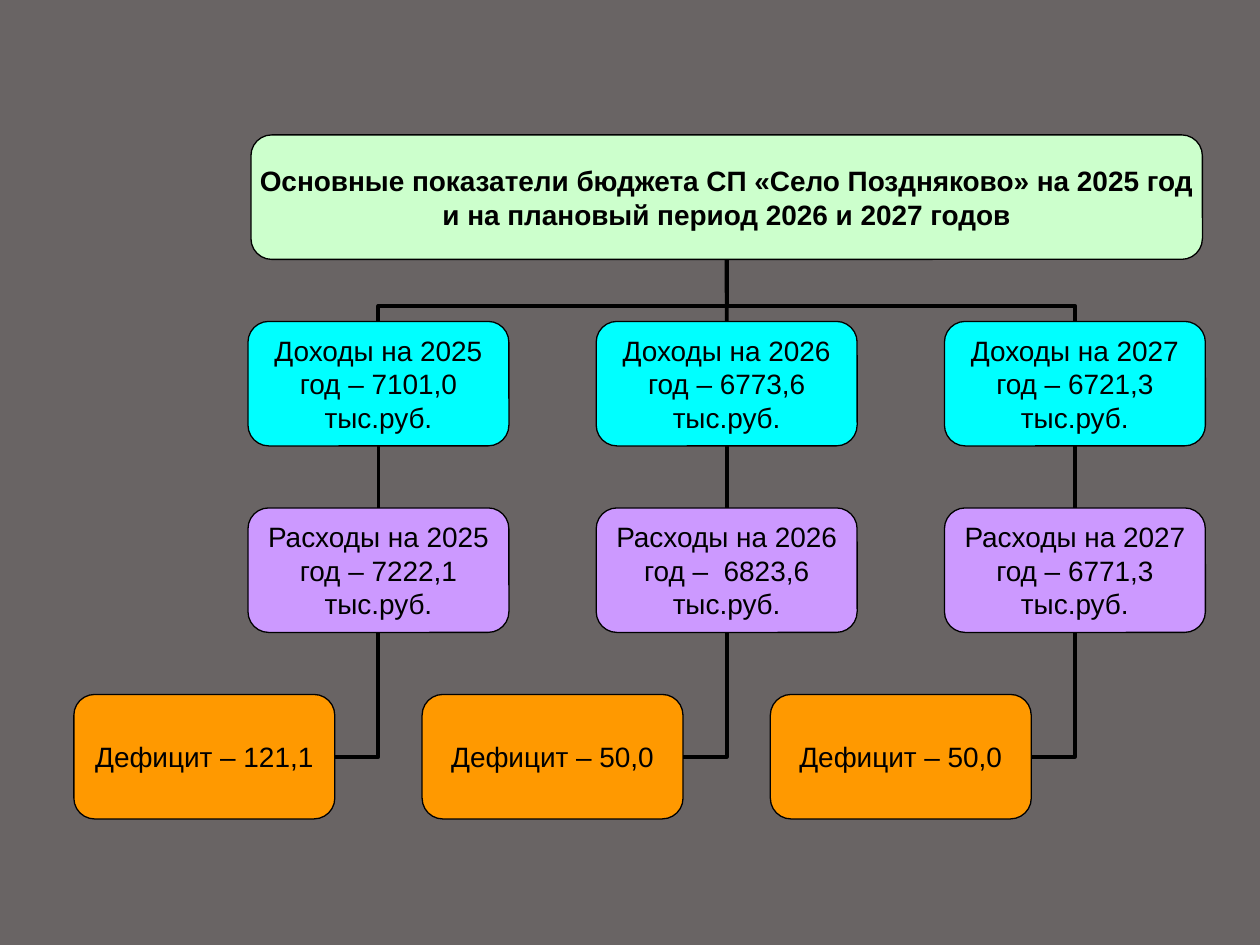
from typing import NamedTuple

from pptx import Presentation
from pptx import util as u
from pptx.dml.color import RGBColor
from pptx.enum import shapes, text
from pptx.oxml.ns import qn
from pptx.util import Cm

GREY = RGBColor(0x69, 0x64, 0x64)
GREEN = RGBColor(0xCC, 0xFF, 0xCC)
CYAN = RGBColor(0x00, 0xFF, 0xFF)
LILAC = RGBColor(0xCC, 0x99, 0xFF)
ORANGE = RGBColor(0xFF, 0x99, 0x00)
BLACK = RGBColor(0, 0, 0)

LEFT, TOP = 5.0, 2.72
STEP, PITCH = 7.02, 3.76
WIDE, HIGH = 5.26, 2.51
HEAD = 19.18
SHIFT = 3.51  # deficit boxes stand this far left of their column
BEND = 25400  # elbow position, in 1/100000 of the gap


class Year(NamedTuple):
    income: str
    spend: str
    gap: str


TITLE = ("Основные показатели бюджета СП «Село Поздняково» на 2025 год "
         "и на плановый период 2026 и 2027 годов")
YEARS = [
    Year("Доходы на 2025 год – 7101,0 тыс.руб.",
         "Расходы на 2025 год – 7222,1 тыс.руб.", "Дефицит – 121,1"),
    Year("Доходы на 2026 год – 6773,6 тыс.руб.",
         "Расходы на 2026 год –  6823,6 тыс.руб.", "Дефицит – 50,0"),
    Year("Доходы на 2027 год – 6721,3 тыс.руб.",
         "Расходы на 2027 год – 6771,3 тыс.руб.", "Дефицит – 50,0"),
]


def add_box(slide, x: float, row: int, words: str, fill: RGBColor,
            wide: float = WIDE, bold: bool = False):
    box = slide.shapes.add_shape(
        shapes.MSO_SHAPE.ROUNDED_RECTANGLE,
        Cm(x), Cm(TOP + row * PITCH), Cm(wide), Cm(HIGH))
    box.shadow.inherit = False
    box.fill.solid()
    box.fill.fore_color.rgb = fill
    box.line.color.rgb = BLACK
    box.line.width = u.Pt(0.75)
    frame = box.text_frame
    frame.word_wrap = True
    frame.vertical_anchor = text.MSO_ANCHOR.MIDDLE
    frame.margin_left = frame.margin_right = 0
    frame.margin_top = frame.margin_bottom = 0
    para = frame.paragraphs[0]
    para.text = words
    para.alignment = text.PP_ALIGN.CENTER
    font = para.font
    font.name, font.size, font.bold = "Arial", u.Pt(16), bold
    font.color.rgb = BLACK
    return box


def add_line(slide, kind, x1: int, y1: int, x2: int, y2: int):
    line = slide.shapes.add_connector(kind, x1, y1, x2, y2)
    line.line.color.rgb = BLACK
    line.line.width = u.Pt(2.25)
    props = line._element.spPr
    props.append(props.makeelement(qn("a:effectLst"), {}))
    return line


def join(slide, low, high) -> None:
    """Link the top of one box straight up to the bottom of another."""
    line = add_line(slide, shapes.MSO_CONNECTOR.STRAIGHT, 0, 0, 0, 0)
    line.begin_connect(low, 0)
    line.end_connect(high, 2)


def branch(slide, low, high) -> None:
    """Link a side box up to the title with a turned three-part elbow."""
    x1, y1 = low.left + low.width // 2, low.top
    x2, y2 = high.left + high.width // 2, high.top + high.height
    midx, midy = (x1 + x2) // 2, (y1 + y2) // 2
    # The frame is given before its quarter turn, so the sides are swapped.
    dx, dy = (y1 - y2) // 2, abs(x2 - x1) // 2
    right = x1 > x2
    if right:
        dx = -dx
    line = add_line(slide, shapes.MSO_CONNECTOR.ELBOW,
                    midx - dx, midy - dy, midx + dx, midy + dy)
    props = line._element.spPr
    props.xfrm.set("rot", str((90 if right else 270) * 60000))
    props.prstGeom.rewrite_guides([("adj1", BEND)])


def corner(slide, low, high) -> None:
    """Link the right side of one box up to the bottom of another."""
    line = add_line(slide, shapes.MSO_CONNECTOR.ELBOW,
                    low.left + low.width, low.top + low.height // 2,
                    high.left + high.width // 2, high.top + high.height)
    line._element.spPr.prstGeom.set("prst", "bentConnector2")


def main() -> None:
    deck = Presentation()
    deck.slide_width, deck.slide_height = Cm(25.4), Cm(19.05)
    slide = deck.slides.add_slide(deck.slide_layouts[6])
    slide.background.fill.solid()
    slide.background.fill.fore_color.rgb = GREY

    mid = LEFT + STEP + WIDE / 2
    head = add_box(slide, mid - HEAD / 2, 0, TITLE, GREEN, HEAD, True)
    for col, year in enumerate(YEARS):
        x = LEFT + col * STEP
        income = add_box(slide, x, 1, year.income, CYAN)
        spend = add_box(slide, x, 2, year.spend, LILAC)
        gap = add_box(slide, x - SHIFT, 3, year.gap, ORANGE)
        link = join if col == 1 else branch
        link(slide, income, head)
        join(slide, spend, income)
        corner(slide, gap, spend)

    deck.save("out.pptx")


if __name__ == "__main__":
    main()
